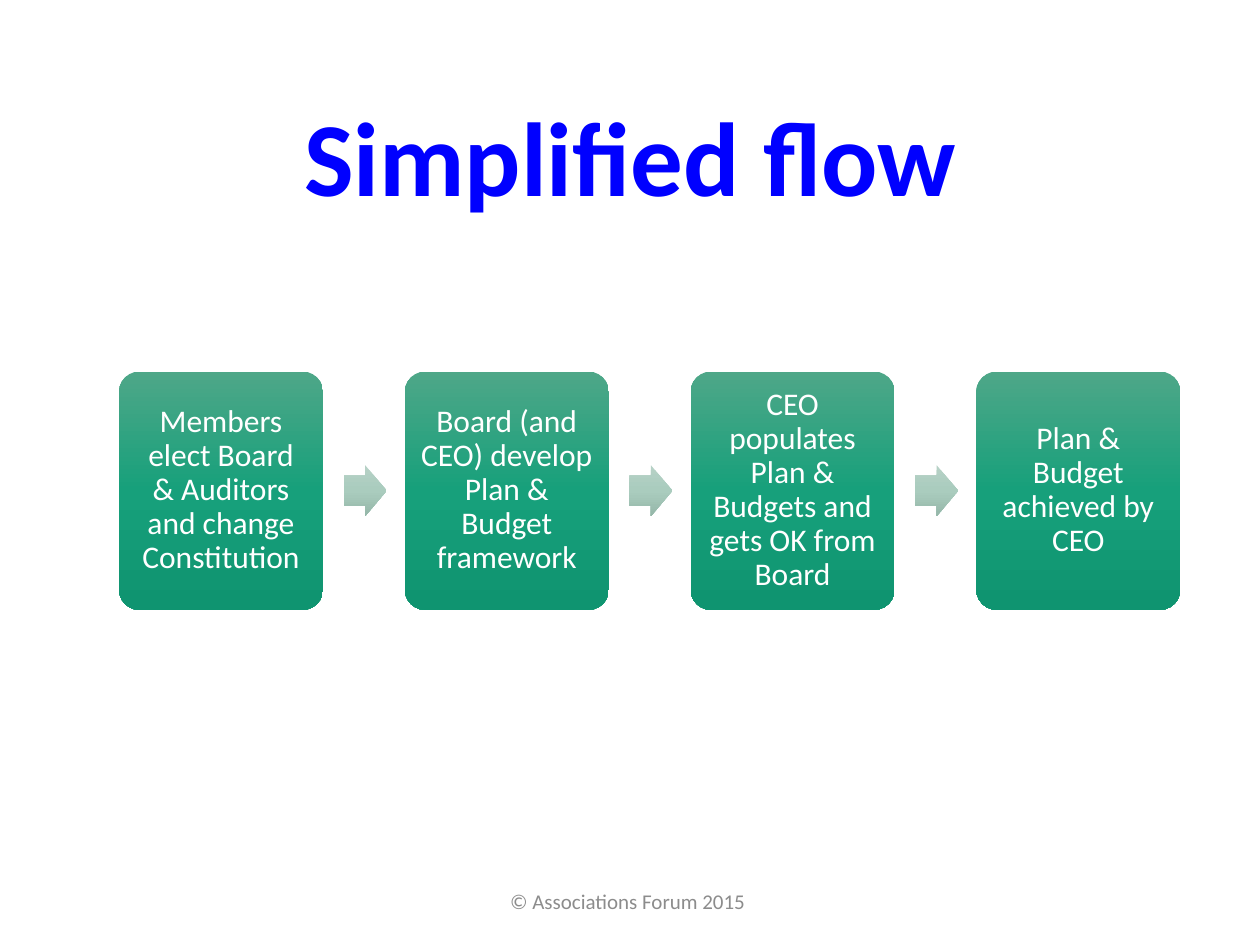
import copy

import pptx
import pptx.dml.color
import pptx.enum.shapes
import pptx.enum.text
import pptx.oxml.ns
import pptx.util

Pt = pptx.util.Pt
MSO_SHAPE = pptx.enum.shapes.MSO_SHAPE
ANCHOR = pptx.enum.text.MSO_ANCHOR


def color(value):
    return pptx.dml.color.RGBColor.from_string(value)


def write(sp, text, size=18, fill="FFFFFF", bold=False, anchor=ANCHOR.MIDDLE,
          wrap=True, inset=None, spacing=None):
    tf = sp.text_frame
    tf.word_wrap = wrap
    tf.vertical_anchor = anchor
    if inset is not None:
        tf.margin_left = tf.margin_right = Pt(inset)
        tf.margin_top = tf.margin_bottom = Pt(inset)
    p = tf.paragraphs[0]
    p.alignment = pptx.enum.text.PP_ALIGN.CENTER
    p.line_spacing = spacing
    r = p.add_run()
    r.text = text
    r.font.name = "Calibri"
    r.font.size = Pt(size)
    r.font.bold = bold
    r.font.color.rgb = color(fill)


prs = pptx.Presentation()
prs.slide_width, prs.slide_height = Pt(720), Pt(540)
s = prs.slides.add_slide(prs.slide_layouts[6])

steps = [
    "Members elect Board & Auditors and change Constitution",
    "Board (and CEO) develop Plan & Budget framework",
    "CEO populates Plan & Budgets and gets OK from Board",
    "Plan & Budget achieved by CEO",
]
left, pitch, middle = 68, 163.3, 280.4
box_w, box_h = 116.6, 136.2
arrow_w, arrow_h, arrow_offset = 24.6, 29, 128.4
box_colors = ["4EA788", "17A07B", "0F9470"]
arrow_colors = ["B6D1C6", "AACCBE", "95B7A9"]

for i, text in enumerate(steps):
    x = left + i * pitch
    box = s.shapes.add_shape(MSO_SHAPE.ROUNDED_RECTANGLE, Pt(x), Pt(middle - box_h / 2),
                             Pt(box_w), Pt(box_h))
    box.adjustments[0] = 0.1
    write(box, text, inset=5.4, spacing=0.9)
    painted = [(box, box_colors)]
    if i < len(steps) - 1:
        arrow = s.shapes.add_shape(MSO_SHAPE.RIGHT_ARROW, Pt(x + arrow_offset),
                                   Pt(middle - arrow_h / 2), Pt(arrow_w), Pt(arrow_h))
        arrow.adjustments[0] = 0.6
        arrow.adjustments[1] = 0.5
        painted.append((arrow, arrow_colors))
    for sp, colors in painted:
        sp.shadow.inherit = False
        sp.line.fill.background()
        sp.fill.gradient()
        sp.fill.gradient_angle = 270
        stops = sp._element.spPr.find(".//" + pptx.oxml.ns.qn("a:gsLst"))
        stops.append(copy.deepcopy(stops[-1]))
        for stop, position, value in zip(sp.fill.gradient_stops, (0, 0.5, 1), colors):
            stop.position = position
            stop.color.rgb = color(value)

footer = s.shapes.add_textbox(Pt(238.5), Pt(500.5), Pt(243), Pt(28.8))
write(footer, "© Associations Forum 2015 ", size=12, fill="8C8C8C")

title = s.shapes.add_textbox(Pt(164), Pt(49), Pt(392.4), Pt(80))
write(title, "Simplified flow", size=60, fill="0000FF", bold=True,
      anchor=ANCHOR.TOP, wrap=False)
title.text_frame.auto_size = pptx.enum.text.MSO_AUTO_SIZE.SHAPE_TO_FIT_TEXT

prs.save("out.pptx")
